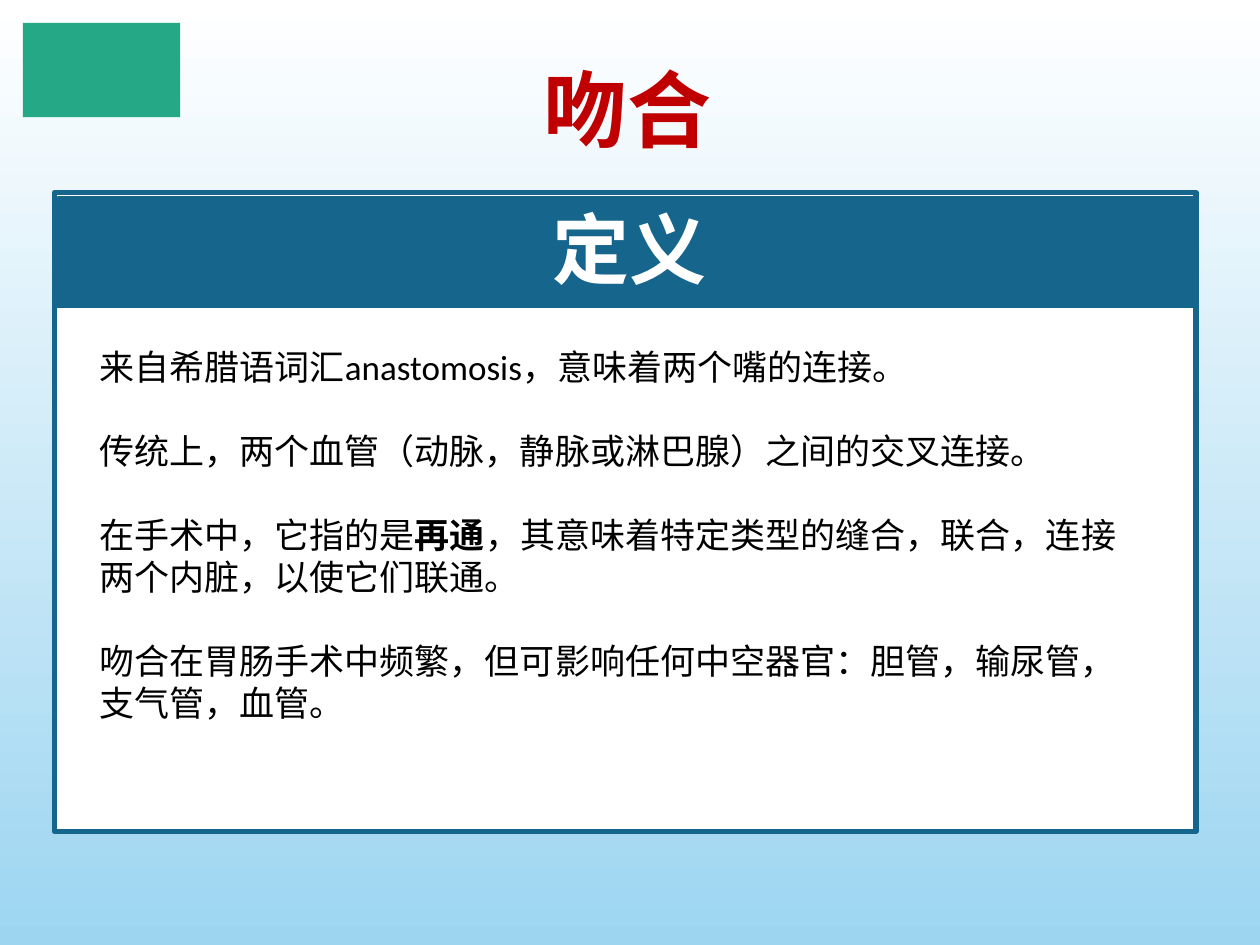
from pptx import Presentation
from pptx.dml.color import RGBColor
from pptx.enum.shapes import MSO_SHAPE as SHAPE
from pptx.enum.text import PP_ALIGN as ALIGN
from pptx.util import Pt

WHITE = RGBColor(0xFF, 0xFF, 0xFF)
BLACK = RGBColor(0x00, 0x00, 0x00)
SKY = RGBColor(0x9D, 0xD5, 0xF1)
BLUE = RGBColor(0x15, 0x65, 0x8D)
RED = RGBColor(0xC0, 0x00, 0x00)
GREEN = RGBColor(0x24, 0xA8, 0x85)

prs = Presentation()
prs.slide_width, prs.slide_height = Pt(720), Pt(540)
s = prs.slides.add_slide(prs.slide_layouts[6])


def add_rect(x, y, w, h, fill, line=None, width=0):
    sp = s.shapes.add_shape(SHAPE.RECTANGLE, Pt(x), Pt(y), Pt(w), Pt(h))
    sp.shadow.inherit = False
    sp.fill.solid()
    sp.fill.fore_color.rgb = fill
    if line is None:
        sp.line.fill.background()
    else:
        sp.line.color.rgb = line
        sp.line.width = Pt(width)


def add_text(paragraphs, x, y, w, h, size, color, font="Calibri", bold=False,
             align=ALIGN.LEFT, gap=0):
    """Each paragraph is a list of runs; every second run is emphasised."""
    tf = s.shapes.add_textbox(Pt(x), Pt(y), Pt(w), Pt(h)).text_frame
    tf.word_wrap = True
    for i, runs in enumerate(paragraphs):
        p = tf.add_paragraph() if i else tf.paragraphs[0]
        p.alignment = align
        if i:
            p.space_before = Pt(gap)
        for j, text in enumerate(runs):
            r = p.add_run()
            r.text = text
            r.font.name = font
            r.font.size = Pt(size)
            r.font.color.rgb = color
            r.font.bold = bold or j % 2 == 1


# Background, white at the top to sky blue at the bottom
bg = s.background.fill
bg.gradient()
bg.gradient_angle = 270
for stop, color, pos in zip(bg.gradient_stops, (WHITE, SKY), (0, 1)):
    stop.color.rgb = color
    stop.position = pos

# Panel and slide title
add_rect(31, 110, 652.5, 365, WHITE, line=BLUE, width=3)
add_text([["吻合"]], -1.5, 29.5, 720, 65, size=48, color=RED, bold=True,
         align=ALIGN.CENTER)

# Definition text
definition = [
    ["来自希腊语词汇anastomosis，意味着两个嘴的连接。"],
    ["传统上，两个血管（动脉，静脉或淋巴腺）之间的交叉连接。"],
    ["在手术中，它指的是", "再通",
     "，其意味着特定类型的缝合，联合，连接两个内脏，以使它们联通。"],
    ["吻合在胃肠手术中频繁，但可影响任何中空器官：胆管，输尿管，支气管，血管。"],
]
add_text(definition, 49.7, 194, 615, 223, size=20, color=BLACK, gap=24)

# Corner block
add_rect(13, 13, 90, 54, GREEN)

# Panel header
add_rect(33, 113, 649, 62, BLUE, line=BLUE, width=2)
add_text([["定义"]], 0, 111.6, 720, 60, size=44, color=WHITE, bold=True,
         align=ALIGN.CENTER)

prs.save("out.pptx")
